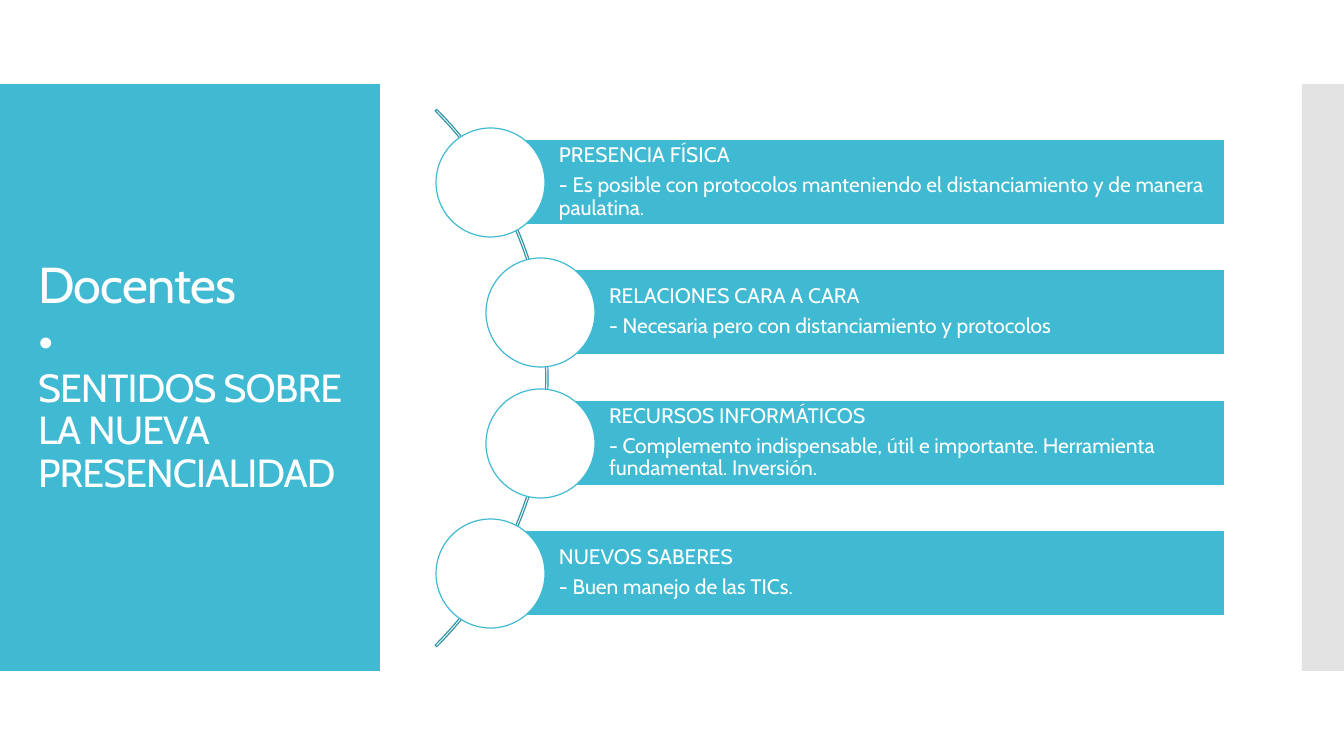
from dataclasses import dataclass

from lxml.etree import SubElement
from pptx import Presentation
from pptx.dml.color import RGBColor
from pptx.enum.shapes import MSO_SHAPE
from pptx.enum.text import MSO_ANCHOR, MSO_AUTO_SIZE, PP_ALIGN
from pptx.oxml.ns import qn
from pptx.util import Emu, Pt

RECTANGLE, OVAL, ARC = MSO_SHAPE.RECTANGLE, MSO_SHAPE.OVAL, MSO_SHAPE.BLOCK_ARC
MIDDLE, LEFT, NO_FIT = MSO_ANCHOR.MIDDLE, PP_ALIGN.LEFT, MSO_AUTO_SIZE.NONE
EMU_PER_PX = 914400 / 100.8

ROWS = (
    ("PRESENCIA FÍSICA",
     "- Es posible con protocolos manteniendo el distanciamiento y de manera paulatina.", 490),
    ("RELACIONES CARA A CARA",
     "- Necesaria pero con distanciamiento y protocolos", 540),
    ("RECURSOS INFORMÁTICOS",
     "- Complemento indispensable, útil e importante. Herramienta fundamental. Inversión.", 540),
    ("NUEVOS SABERES",
     "- Buen manejo de las TICs.", 490),
)
FIRST_TOP, LAST_TOP, BAR_RIGHT, BAR_HEIGHT, CIRCLE = 139, 530, 1225, 86, 109


@dataclass(frozen=True)
class Theme:
    """Colours, font and type sizes of the slide."""
    accent: str = "40BAD2"
    arc: str = "3395A8"
    side: str = "C8C8C8"
    white: str = "FFFFFF"
    font: str = "Cabin"
    heading: int = 36
    subheading: int = 28
    body: int = 15
    line: float = 0.85


THEME = Theme()


def px(length):
    """Turn pixels into EMU."""
    return Emu(round(length * EMU_PER_PX))


def place(shape, left, top, width, height):
    """Move and size a shape in pixels."""
    shape.left, shape.top = px(left), px(top)
    shape.width, shape.height = px(width), px(height)


def style_span(span, size):
    """Give a run the theme font in white."""
    span.font.name = THEME.font
    span.font.size = Pt(size)
    span.font.color.rgb = RGBColor.from_string(THEME.white)


def add_figure(page, kind, box, fill=None, line=None):
    """Add a preset shape with optional fill and outline."""
    shape = page.shapes.add_shape(kind, *map(px, box))
    shape.shadow.inherit = False
    if fill:
        shape.fill.solid()
        shape.fill.fore_color.rgb = RGBColor.from_string(fill)
    else:
        shape.fill.background()
    if line:
        shape.line.color.rgb = RGBColor.from_string(line)
        shape.line.width = Pt(THEME.line)
    else:
        shape.line.fill.background()
    return shape


def add_side_panels(page):
    """Add the title panel and the translucent strip at the right."""
    add_figure(page, RECTANGLE, (0, 84, 380, 587), THEME.accent)
    strip = add_figure(page, RECTANGLE, (1302, 84, 42, 587), THEME.side)
    colour = strip.fill._xPr.find(".//" + qn("a:srgbClr"))
    SubElement(colour, qn("a:alpha"), val="50000")


def fill_title(page):
    """Write the title in its placeholder, in front of the panel."""
    title = page.shapes.title
    page.shapes._spTree.append(title._element)
    place(title, 28, 124, 325, 507)
    frame = title.text_frame
    frame.text = "Docentes\v•\vSENTIDOS SOBRE LA NUEVA PRESENCIALIDAD"
    frame.word_wrap, frame.auto_size = True, NO_FIT
    frame.vertical_anchor = MIDDLE
    para = frame.paragraphs[0]
    para.alignment, para.line_spacing = LEFT, 0.9
    sizes = (THEME.heading, THEME.heading, THEME.subheading)
    for span, size in zip(para.runs, sizes):
        style_span(span, size)
        span.font._element.set("spc", "-60")
    for line_break in para._p.findall(qn("a:br")):
        SubElement(line_break, qn("a:rPr"), sz=str(THEME.heading * 100))


def add_row(page, top, heading, detail, left):
    """Add a text bar with a circle over its left end."""
    bar = add_figure(page, RECTANGLE, (left, top, BAR_RIGHT - left, BAR_HEIGHT),
                     THEME.accent, THEME.white)
    frame = bar.text_frame
    frame.text = f"{heading}\n{detail}"
    frame.word_wrap, frame.vertical_anchor = True, MIDDLE
    frame.margin_left = px(69)
    frame.margin_top = frame.margin_right = frame.margin_bottom = px(4)
    for para in frame.paragraphs:
        para.alignment, para.line_spacing, para.space_after = LEFT, 0.9, Pt(5)
        style_span(para.runs[0], THEME.body)
    add_figure(page, OVAL, (left - CIRCLE // 2, top - 11, CIRCLE, CIRCLE),
               THEME.white, THEME.accent)


def main():
    """Build and save the slide."""
    deck = Presentation()
    deck.slide_width, deck.slide_height = px(1344), px(756)
    page = deck.slides.add_slide(deck.slide_layouts[5])
    add_side_panels(page)
    fill_title(page)
    arc = add_figure(page, ARC, (-212, -2, 760, 760), line=THEME.arc)
    for index, value in enumerate((189, 27, 0.003)):
        arc.adjustments[index] = value
    pitch = (LAST_TOP - FIRST_TOP) / (len(ROWS) - 1)
    for index, row in enumerate(ROWS):
        add_row(page, round(FIRST_TOP + index * pitch), *row)
    deck.save("out.pptx")


if __name__ == "__main__":
    main()
